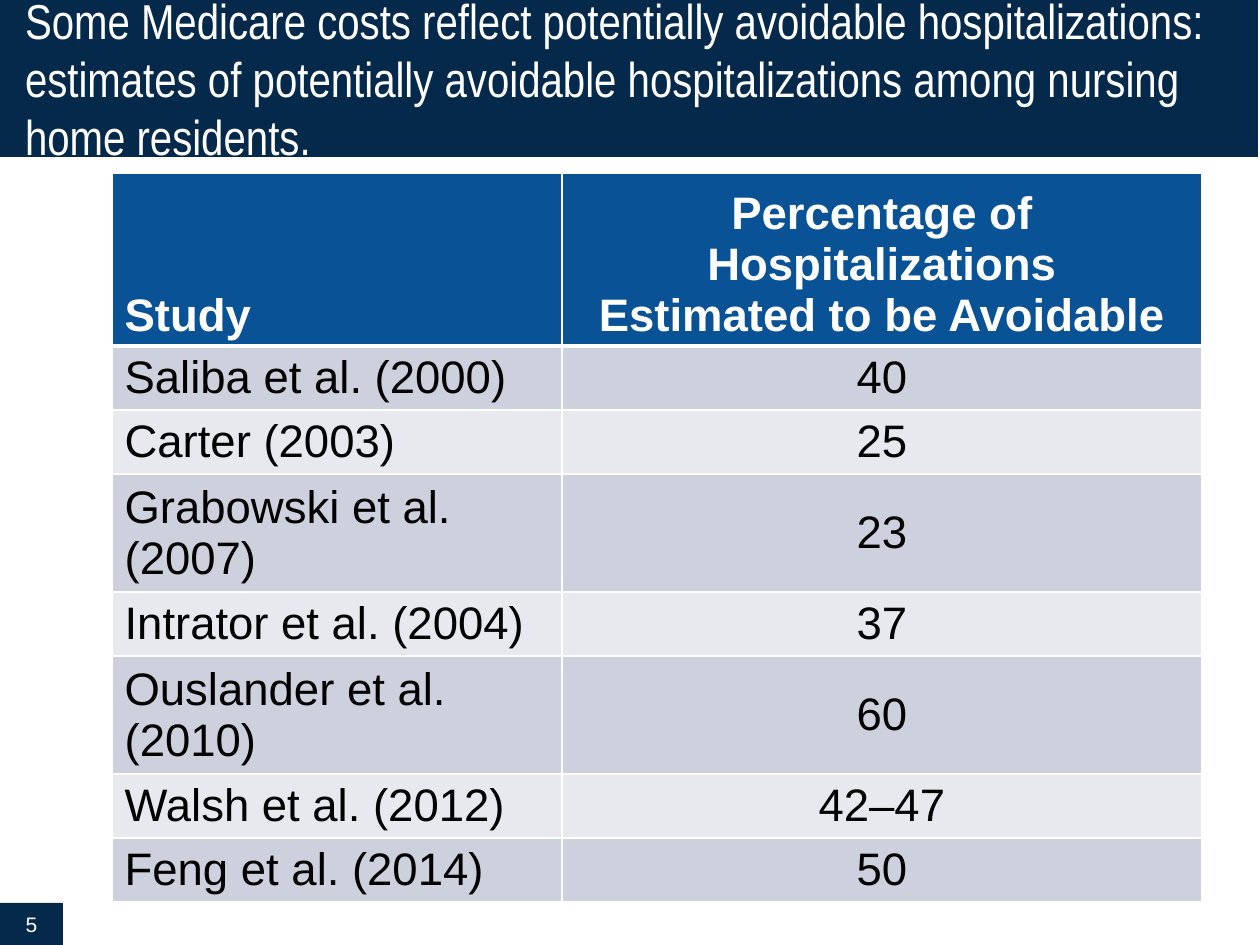
from dataclasses import dataclass

from lxml.etree import SubElement
from pptx import Presentation
from pptx.dml.color import RGBColor
from pptx.enum.shapes import MSO_SHAPE
from pptx.enum.text import MSO_ANCHOR, MSO_AUTO_SIZE, PP_ALIGN
from pptx.oxml.ns import qn
from pptx.util import Emu, Pt

PX_PER_INCH = 126
COLORS = {
    "navy": "04294A",
    "header": "085295",
    "band_dark": "CCD1DD",
    "band_light": "E7E9EF",
    "white": "FFFFFF",
    "black": "000000",
}
COLUMN_WIDTHS = (450, 640)
HEADER_HEIGHT = 173
LINE_HEIGHT, TWO_LINE_HEIGHT = 64, 118


@dataclass
class Study:
    name: str
    percentage: str
    height: int = LINE_HEIGHT


STUDIES = [
    Study("Saliba et al. (2000)", "40"),
    Study("Carter (2003)", "25"),
    Study("Grabowski et al. (2007)", "23", TWO_LINE_HEIGHT),
    Study("Intrator et al. (2004)", "37"),
    Study("Ouslander et al. (2010)", "60", TWO_LINE_HEIGHT),
    Study("Walsh et al. (2012)", "42–47"),
    Study("Feng et al. (2014)", "50"),
]


def px(n: int) -> Emu:
    return Emu(round(n * 914400 / PX_PER_INCH))


def rgb(name: str) -> RGBColor:
    return RGBColor.from_string(COLORS[name])


def fill_solid(target, color: str) -> None:
    target.fill.solid()
    target.fill.fore_color.rgb = rgb(color)


def set_text(tf, text: str, size: int, color: str, align=PP_ALIGN.LEFT,
             font: str = "Arial", bold: bool = False):
    tf.word_wrap = True
    p = tf.paragraphs[0]
    p.text = text
    p.alignment = align
    p.font.name = font
    p.font.size = Pt(size)
    p.font.bold = bold
    p.font.color.rgb = rgb(color)
    return p


def set_borders(cell, bottom: int = 1) -> None:
    """Draw white cell borders; widths are in points."""
    tc_pr = cell._tc.get_or_add_tcPr()
    widths = {"a:lnL": 1, "a:lnR": 1, "a:lnT": 1, "a:lnB": bottom}
    for tag, width in widths.items():
        ln = SubElement(tc_pr, qn(tag), w=str(Pt(width)))
        solid = SubElement(ln, qn("a:solidFill"))
        SubElement(solid, qn("a:srgbClr"), val=COLORS["white"])


def add_title(slide, text: str) -> None:
    sp = slide.shapes.title
    sp.left, sp.top, sp.width, sp.height = px(0), px(0), px(1258), px(157)
    fill_solid(sp, "navy")
    tf = sp.text_frame
    tf.auto_size = MSO_AUTO_SIZE.NONE
    tf.vertical_anchor = MSO_ANCHOR.MIDDLE
    tf.margin_left = tf.margin_right = px(25)
    tf.margin_top = tf.margin_bottom = px(13)
    p = set_text(tf, text, 28, "white", font="Arial Narrow")
    p.line_spacing = Pt(33)


def fill_row(cells, texts: tuple[str, str], fill: str, header: bool = False) -> None:
    for cell, text, align in zip(cells, texts, (PP_ALIGN.LEFT, PP_ALIGN.CENTER)):
        set_borders(cell, bottom=3 if header else 1)
        fill_solid(cell, fill)
        cell.margin_top = cell.margin_bottom = px(5)
        cell.vertical_anchor = MSO_ANCHOR.BOTTOM if header else MSO_ANCHOR.MIDDLE
        p = set_text(cell.text_frame, text, 26, "white" if header else "black",
                     align, bold=header)
        if header:
            p.space_after = Pt(4)


def add_study_table(slide, studies: list[Study]) -> None:
    heights = [HEADER_HEIGHT] + [study.height for study in studies]
    table = slide.shapes.add_table(
        len(heights), len(COLUMN_WIDTHS), px(112), px(173),
        px(sum(COLUMN_WIDTHS)), px(sum(heights))).table
    for column, width in zip(table.columns, COLUMN_WIDTHS):
        column.width = px(width)
    for row, height in zip(table.rows, heights):
        row.height = px(height)

    header, *body = table.rows
    fill_row(header.cells,
             ("Study", "Percentage of Hospitalizations\vEstimated to be Avoidable"),
             "header", header=True)
    for i, (row, study) in enumerate(zip(body, studies)):
        fill_row(row.cells, (study.name, study.percentage),
                 "band_light" if i % 2 else "band_dark")


def add_page_number(slide, number: int) -> None:
    sp = slide.shapes.add_shape(MSO_SHAPE.RECTANGLE, px(0), px(903), px(63), px(42))
    sp.shadow.inherit = False
    fill_solid(sp, "navy")
    sp.line.fill.background()
    sp.text_frame.vertical_anchor = MSO_ANCHOR.MIDDLE
    set_text(sp.text_frame, str(number), 12, "white", PP_ALIGN.CENTER)


def main() -> None:
    prs = Presentation()
    prs.slide_width, prs.slide_height = px(1260), px(945)
    slide = prs.slides.add_slide(prs.slide_layouts[5])
    add_title(slide, "Some Medicare costs reflect potentially avoidable "
                     "hospitalizations: estimates of potentially avoidable "
                     "hospitalizations among nursing home residents.")
    add_study_table(slide, STUDIES)
    add_page_number(slide, 5)
    prs.save("out.pptx")


if __name__ == "__main__":
    main()
